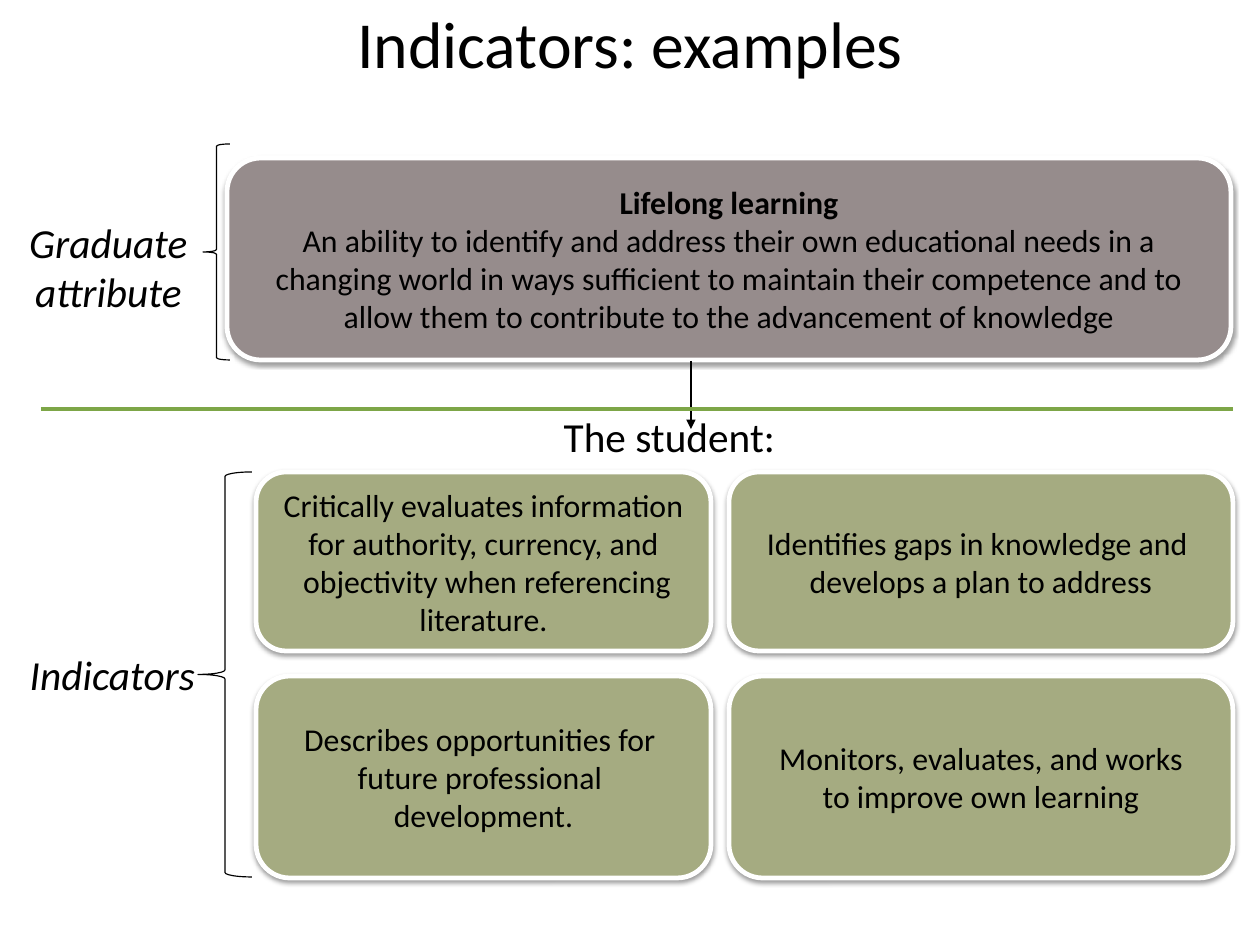
import lxml.etree
import pptx
import pptx.dml.color
import pptx.enum.shapes
import pptx.enum.text
import pptx.oxml.ns
import pptx.util

EMU_PER_PX = 8000
FONT = "Calibri"
BLACK, WHITE = "000000", "FFFFFF"
TAUPE, SAGE, GREEN = "968C8C", "A5AB81", "7DA647"
COLUMNS = [(256, 455), (729, 504)]
ROWS = [(472, 179), (676, 202)]
ATTRIBUTE = [
    "Lifelong learning",
    "An ability to identify and address their own educational needs in a",
    " changing world in ways sufficient to maintain their competence and to ",
    "allow them to contribute to the advancement of knowledge",
]
INDICATORS = [
    [
        ["Critically evaluates information", "for authority, currency, and",
         " objectivity when referencing", "literature."],
        ["Identifies gaps in knowledge and ", "develops a plan to address"],
    ],
    [
        ["Describes opportunities for ", "future professional ", "development."],
        ["Monitors, evaluates, and works", "to improve own learning"],
    ],
]


def px(length):
    """Turn a length in px into EMU."""
    return pptx.util.Emu(length * EMU_PER_PX)


def color(value):
    """Turn a hex string into a colour."""
    return pptx.dml.color.RGBColor.from_string(value)


def add_child(parent, tag, **attributes):
    """Append a drawing element to a parent element."""
    names = {name: str(value) for name, value in attributes.items()}
    return lxml.etree.SubElement(parent, pptx.oxml.ns.qn(tag), names)


def write_lines(shape, lines, size, italic=False, margins=(11, 6)):
    """Write centred black lines into a shape."""
    frame = shape.text_frame
    frame.margin_left = frame.margin_right = px(margins[0])
    frame.margin_top = frame.margin_bottom = px(margins[1])
    frame.text = "\n".join(lines)
    for paragraph in frame.paragraphs:
        paragraph.alignment = pptx.enum.text.PP_ALIGN.CENTER
        for run in paragraph.runs:
            run.font.name = FONT
            run.font.size = pptx.util.Pt(size)
            run.font.italic = italic
            run.font.color.rgb = color(BLACK)


def add_label(slide, box, lines, size=26, italic=False, margins=(11, 6)):
    """Add a wrapped text box."""
    shape = slide.shapes.add_textbox(*map(px, box))
    shape.text_frame.word_wrap = True
    write_lines(shape, lines, size, italic, margins)


def add_shadow(shape):
    """Give a shape a soft shadow straight below it."""
    shape.shadow.inherit = False
    effects = shape._element.spPr.find(pptx.oxml.ns.qn("a:effectLst"))
    shadow = add_child(effects, "a:outerShdw", blurRad=pptx.util.Pt(3.1),
                       dist=pptx.util.Pt(1.6), dir=90 * 60000, rotWithShape=0)
    shade = add_child(shadow, "a:srgbClr", val=BLACK)
    add_child(shade, "a:alpha", val=38000)


def add_card(slide, box, lines, fill):
    """Add a rounded card with a white border and a shadow."""
    kind = pptx.enum.shapes.MSO_SHAPE.ROUNDED_RECTANGLE
    card = slide.shapes.add_shape(kind, *map(px, box))
    card.fill.solid()
    card.fill.fore_color.rgb = color(fill)
    card.line.color.rgb = color(WHITE)
    card.line.width = pptx.util.Pt(3)
    add_shadow(card)
    card.text_frame.word_wrap = False
    card.text_frame.vertical_anchor = pptx.enum.text.MSO_ANCHOR.MIDDLE
    write_lines(card, lines, 20)
    return card


def add_brace(slide, box):
    """Add a thin left brace."""
    kind = pptx.enum.shapes.MSO_SHAPE.LEFT_BRACE
    brace = slide.shapes.add_shape(kind, *map(px, box))
    brace.shadow.inherit = False
    brace.fill.background()
    brace.line.color.rgb = color(BLACK)
    brace.line.width = pptx.util.Pt(0.75)


def add_line(slide, ends, line_color, width, arrow=False):
    """Add a straight line, with an arrowhead at its end if asked."""
    kind = pptx.enum.shapes.MSO_CONNECTOR.STRAIGHT
    line = slide.shapes.add_connector(kind, *map(px, ends))
    line.line.color.rgb = color(line_color)
    line.line.width = pptx.util.Pt(width)
    if arrow:
        add_child(line.line._get_or_add_ln(), "a:tailEnd", type="triangle")
    add_child(line._element.spPr, "a:effectLst")


def main():
    """Build the slide and save it."""
    presentation = pptx.Presentation()
    presentation.slide_width = px(1260)
    presentation.slide_height = px(945)
    slide = presentation.slides.add_slide(presentation.slide_layouts[6])

    add_label(slide, (63, 0, 1134, 83), ["Indicators: examples"], 41.4, margins=(8, 3))
    attribute = add_card(slide, (227, 158, 1004, 202), ATTRIBUTE, TAUPE)
    attribute.text_frame.paragraphs[0].runs[0].font.bold = True
    for (top, height), row in zip(ROWS, INDICATORS):
        for (left, width), lines in zip(COLUMNS, row):
            add_card(slide, (left, top, width, height), lines, SAGE)

    add_line(slide, (691, 361, 691, 429), BLACK, 0.75, arrow=True)
    add_line(slide, (41, 409, 1233, 409), GREEN, 2.83)
    add_label(slide, (0, 211, 217, 149), ["Graduate", "attribute"], italic=True)
    add_label(slide, (414, 405, 511, 136), ["The student:"])
    add_label(slide, (0, 643, 225, 81), ["Indicators"], italic=True)
    add_brace(slide, (203, 144, 27, 216))
    add_brace(slide, (198, 472, 54, 405))
    presentation.save("out.pptx")


if __name__ == "__main__":
    main()
